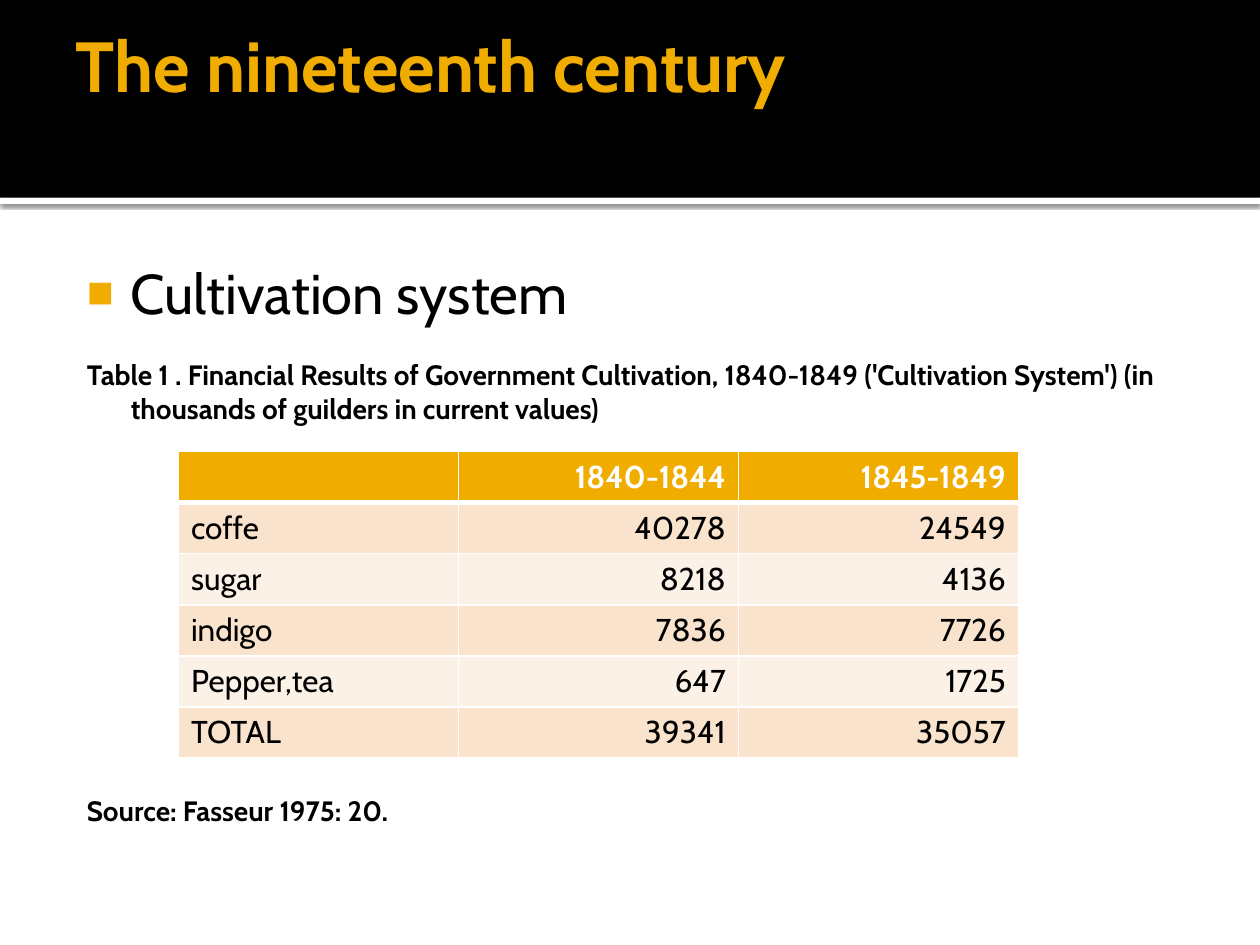
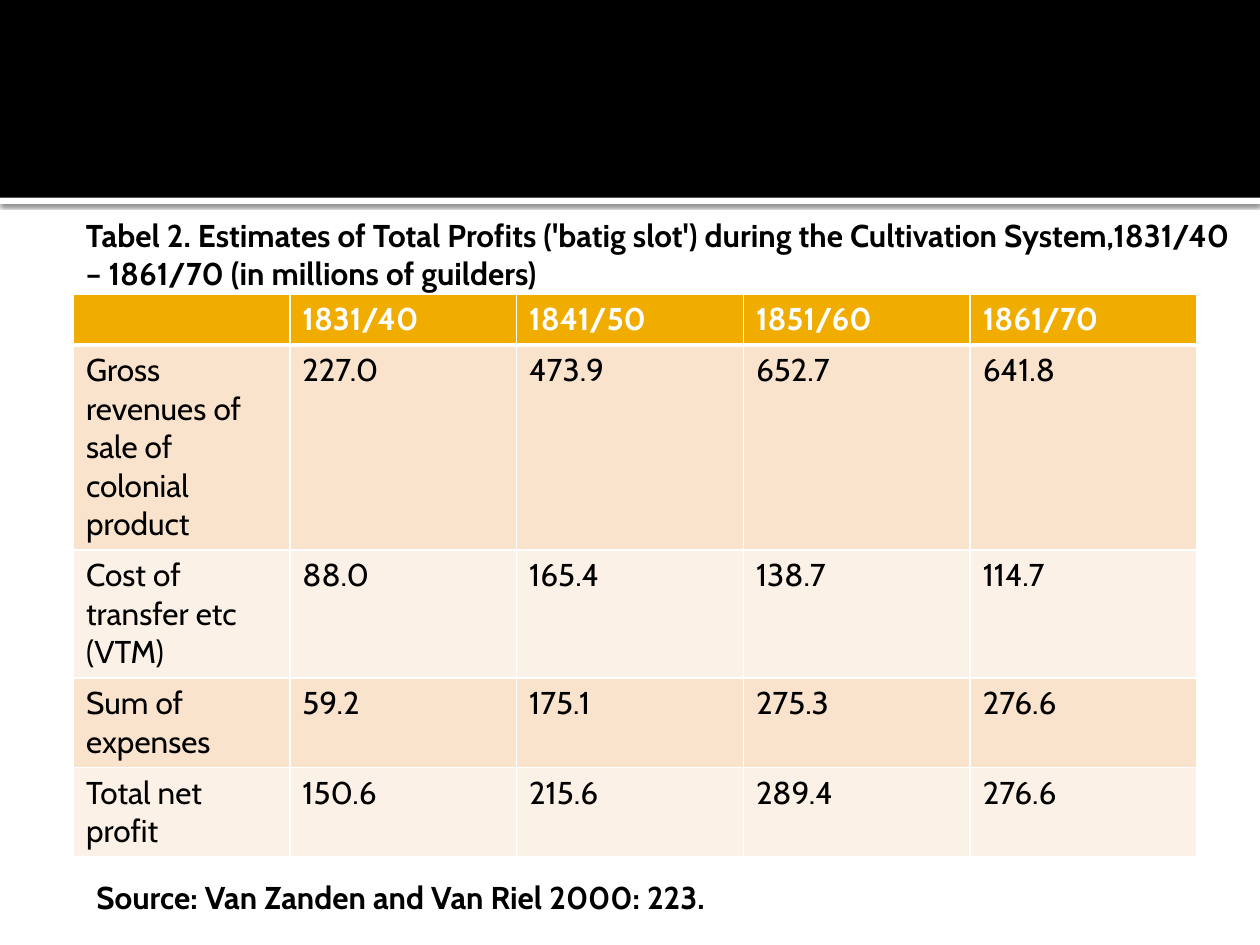
from lxml import etree
from pptx import Presentation
from pptx.dml.color import RGBColor
from pptx.enum.shapes import MSO_SHAPE
from pptx.enum.text import MSO_ANCHOR, MSO_AUTO_SIZE, PP_ALIGN
from pptx.oxml.ns import qn
from pptx.util import Pt

RECT = MSO_SHAPE.RECTANGLE
TOP = MSO_ANCHOR.TOP
NO_FIT = MSO_AUTO_SIZE.NONE
LEFT, RIGHT = PP_ALIGN.LEFT, PP_ALIGN.RIGHT

# Content
TITLE = "The nineteenth century"
# text, size, bold, bulleted, space before
BODY = [
    ("Cultivation system", 32, False, True, 0),
    ("Table 1 . Financial Results of Government Cultivation, 1840-1849 "
     "('Cultivation System') (in thousands of guilders in current values)",
     16, True, False, 18.4),
    ("Source: Fasseur 1975: 20.", 16, True, False, 211),
]
CROPS = [
    ("", "1840-1844", "1845-1849"),
    ("coffe", "40278", "24549"),
    ("sugar", "8218", "4136"),
    ("indigo", "7836", "7726"),
    ("Pepper,tea", "647", "1725"),
    ("TOTAL", "39341", "35057"),
]
PROFITS_CAPTION = ("Tabel 2. Estimates of Total Profits ('batig slot') during the "
                   "Cultivation System,1831/40 – 1861/70 (in millions of guilders)")
PROFITS = [
    ("", "1831/40", "1841/50", "1851/60", "1861/70"),
    ("Gross revenues of sale of colonial product", "227.0", "473.9", "652.7", "641.8"),
    ("Cost of transfer etc (VTM)", "88.0", "165.4", "138.7", "114.7"),
    ("Sum of expenses", "59.2", "175.1", "275.3", "276.6"),
    ("Total net profit", "150.6", "215.6", "289.4", "276.6"),
]
PROFITS_LINES = [1, 5, 3, 2, 2]  # text lines in each row
PROFITS_SOURCE = "Source: Van Zanden and Van Riel 2000: 223."

# Shared look
FONT = "Cabin"
BLACK = RGBColor(0x00, 0x00, 0x00)
WHITE = RGBColor(0xFF, 0xFF, 0xFF)
GOLD = RGBColor(0xF0, 0xAD, 0x00)
STRIPES = [RGBColor(0xFC, 0xF1, 0xE7), RGBColor(0xF9, 0xE3, 0xCC)]
SLIDE_W, SLIDE_H = 720, 540
BAND_H, RULE_H = 113, 3.6
CELL_PAD, LINE_H = 7.2, 21.9  # cell top + bottom margin, one 18 pt line


def add(parent, tag, **attrs):
    return etree.SubElement(parent, qn(tag), {k: str(v) for k, v in attrs.items()})


def write(p, text, size=18, color=BLACK, bold=False, align=LEFT, before=0):
    p.alignment = align
    p.space_before = Pt(before)
    p.space_after = Pt(0)
    p.line_spacing = 1.0
    # The paragraph font also sizes empty cells
    for font in [p.font] + ([p.add_run().font] if text else []):
        font.name, font.size, font.bold = FONT, Pt(size), bold
        font.color.rgb = color
    if text:
        p.runs[0].text = text


def place(sp, x, y, w, h):
    sp.left, sp.top, sp.width, sp.height = Pt(x), Pt(y), Pt(w), Pt(h)


def set_margins(tf, left, top, right, bottom):
    tf.margin_left, tf.margin_top = Pt(left), Pt(top)
    tf.margin_right, tf.margin_bottom = Pt(right), Pt(bottom)


def set_bullet(p, bulleted):
    pPr = p._p.get_or_add_pPr()
    pPr.set("marL", str(Pt(34.5)))
    pPr.set("indent", str(Pt(-25.2)))
    if bulleted:
        add(add(pPr, "a:buClr"), "a:srgbClr", val=GOLD)
        add(pPr, "a:buSzPct", val=80000)
        add(pPr, "a:buChar", char="■")
    else:
        add(pPr, "a:buNone")


def add_header(s):
    """Black band over a white rule with a soft shadow, behind everything."""
    bars = [(BAND_H, RULE_H, WHITE), (0, BAND_H, BLACK)]
    for i, (y, h, color) in enumerate(bars):
        sp = s.shapes.add_shape(RECT, 0, Pt(y), Pt(SLIDE_W), Pt(h))
        sp.shadow.inherit = False
        sp.fill.solid()
        sp.fill.fore_color.rgb = color
        sp.line.fill.background()
        if color == WHITE:
            effects = sp._element.spPr.find(qn("a:effectLst"))
            shadow = add(effects, "a:outerShdw", blurRad=Pt(2.5), dist=Pt(0.8),
                         dir=5400000, algn="tl", rotWithShape=0)
            add(add(shadow, "a:srgbClr", val=BLACK), "a:alpha", val=60000)
        s.shapes._spTree.insert(2 + i, sp._element)


def set_borders(cell, **widths):
    tcPr = cell._tc.get_or_add_tcPr()
    for i, side in enumerate("LRTB"):
        ln = etree.Element(qn("a:ln" + side), w=str(Pt(widths.get(side, 1))))
        add(add(ln, "a:solidFill"), "a:srgbClr", val=WHITE)
        tcPr.insert(i, ln)


def add_table(s, rows, x, y, col_widths, row_heights, number_align):
    frame = s.shapes.add_table(len(rows), len(col_widths), Pt(x), Pt(y),
                               Pt(sum(col_widths)), Pt(sum(row_heights)))
    table = frame.table
    for col, w in zip(table.columns, col_widths):
        col.width = Pt(w)
    for i, (row, h) in enumerate(zip(rows, row_heights)):
        table.rows[i].height = Pt(h)
        for j, text in enumerate(row):
            cell = table.cell(i, j)
            cell.fill.solid()
            cell.fill.fore_color.rgb = STRIPES[i % 2] if i else GOLD
            set_borders(cell, **{0: {"B": 3}, 1: {"T": 3}}.get(i, {}))
            write(cell.text_frame.paragraphs[0], text, bold=i == 0,
                  color=BLACK if i else WHITE, align=number_align if j else LEFT)


def add_note(s, text, x, y, w, h):
    tf = s.shapes.add_textbox(Pt(x), Pt(y), Pt(w), Pt(h)).text_frame
    tf.word_wrap = True
    write(tf.paragraphs[0], text, bold=True)


def build_crops(prs):
    s = prs.slides.add_slide(prs.slide_layouts[1])
    add_header(s)

    # Title
    title = s.shapes.title
    place(title, 36, 12.6, 648, 98.6)
    tf = title.text_frame
    tf.vertical_anchor, tf.auto_size = TOP, NO_FIT
    set_margins(tf, 7.2, 0, 3.6, 3.6)
    write(tf.paragraphs[0], TITLE, size=40.5, color=GOLD, bold=True)

    # Body text, with room for the table above the last line
    body = s.placeholders[1]
    place(body, 36, 139.7, 648, 364.3)
    tf = body.text_frame
    tf.vertical_anchor, tf.auto_size = TOP, NO_FIT
    set_margins(tf, 4.3, 7.8, 7.2, 3.6)
    for i, (text, size, bold, bulleted, before) in enumerate(BODY):
        p = tf.add_paragraph() if i else tf.paragraphs[0]
        write(p, text, size=size, bold=bold, before=before)
        set_bullet(p, bulleted)

    add_table(s, CROPS, 102, 258, [160] * 3, [29.2] * len(CROPS), RIGHT)


def build_profits(prs):
    s = prs.slides.add_slide(prs.slide_layouts[6])
    add_header(s)
    heights = [n * LINE_H + CELL_PAD for n in PROFITS_LINES]
    add_table(s, PROFITS, 42, 168, [123.6] + [129.6] * 4, heights, LEFT)
    add_note(s, PROFITS_CAPTION, 42, 120, 678, 51)
    add_note(s, PROFITS_SOURCE, 48, 498, 390, 29)


def main():
    prs = Presentation()
    prs.slide_width, prs.slide_height = Pt(SLIDE_W), Pt(SLIDE_H)
    build_crops(prs)
    build_profits(prs)
    prs.save("out.pptx")


if __name__ == "__main__":
    main()
